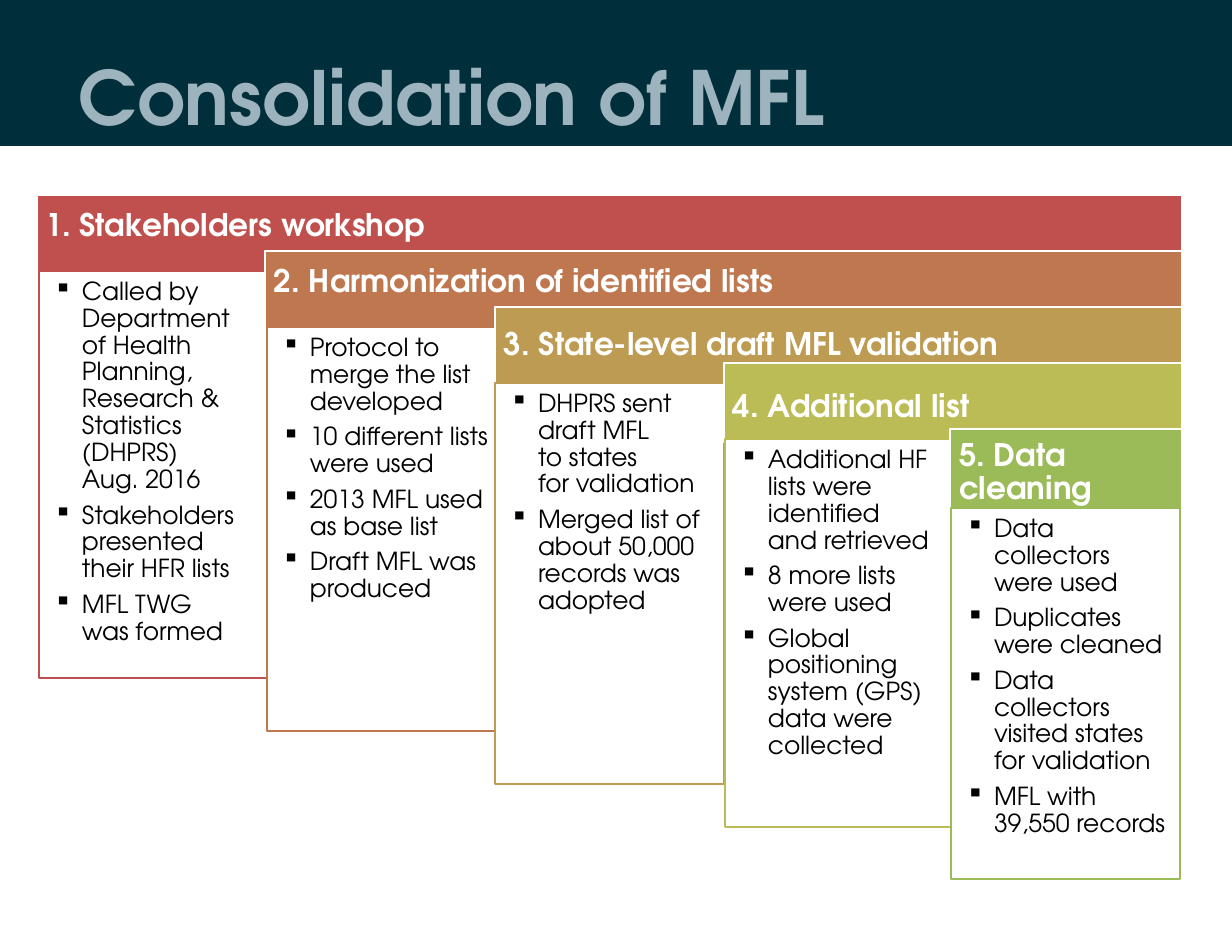
from lxml.etree import SubElement
from pptx import Presentation
from pptx.dml.color import RGBColor
from pptx.enum.shapes import MSO_SHAPE
from pptx.enum.text import MSO_ANCHOR as Anchor, PP_ALIGN as Align
from pptx.oxml.ns import qn
from pptx.util import Emu, Pt

SCALE = 914400 // 112
FONT = "TeX Gyre Adventor"
RIGHT, BAR_H, BODY_W = 1182, 80, 229

# heading, colour, bar (left, top, top inset), body (left, top, bottom), points
STEPS = [
    ("1. Stakeholders workshop", "C0504D", (37, 195, 9), (39, 271, 678), [
        "Called by Department\nof Health Planning, Research & Statistics (DHPRS)\nAug. 2016",
        "Stakeholders presented their HFR lists",
        "MFL TWG\nwas formed"]),
    ("2. Harmonization of identified lists", "BF7750", (265, 251, 9), (267, 327, 731), [
        "Protocol to merge the list developed",
        "10 different lists were used",
        "2013 MFL used as base list",
        "Draft MFL was produced"]),
    ("3. State-level draft MFL validation", "BD9B53", (495, 307, 22), (495, 383, 784), [
        "DHPRS sent draft MFL\nto states\nfor validation",
        "Merged list of about 50,000 records was adopted"]),
    ("4. Additional list", "BCBC56", (724, 363, 34), (725, 439, 827), [
        "Additional HF lists were identified\nand retrieved",
        "8 more lists were used",
        "Global positioning system (GPS) data were collected"]),
    ("5. Data cleaning", "9BBB59", (950, 429, 34), (951, 508, 879), [
        "Data collectors were used",
        "Duplicates were cleaned",
        "Data collectors visited states for validation",
        "MFL with 39,550 records"]),
]


def px(n):
    return Emu(n * SCALE)


def color(code):
    return RGBColor.from_string(code)


def panel(slide, box, fill, line=None):
    shape = slide.shapes.add_shape(MSO_SHAPE.RECTANGLE, *map(px, box))
    shape.shadow.inherit = False
    shape.fill.solid()
    shape.fill.fore_color.rgb = color(fill)
    if line:
        shape.line.color.rgb = color(line)
        shape.line.width = Pt(0.75)
    else:
        shape.line.fill.background()
    return shape


def set_frame(frame, insets, anchor):
    """Insets run left, top, right, bottom."""
    frame.word_wrap = True
    frame.vertical_anchor = anchor
    (frame.margin_left, frame.margin_top,
     frame.margin_right, frame.margin_bottom) = map(px, insets)


def write(para, text, size, code, bold=False):
    para.alignment = Align.LEFT
    for i, part in enumerate(text.split("\n")):
        if i:
            para.add_line_break()
        run = para.add_run()
        run.text = part
        font = run.font
        font.name, font.size, font.bold = FONT, Pt(size), bold
        font.color.rgb = color(code)


def add_bullet(para):
    props = para._p.get_or_add_pPr()
    props.set("marL", str(px(35)))
    props.set("indent", str(px(-28)))
    SubElement(props, qn("a:buChar"), char="▪")


def add_title(slide, box, text):
    left, top, width, height = box
    panel(slide, box, "002E3A")
    label = slide.shapes.add_textbox(
        px(left + 68), px(top + 45), px(width - 164), px(height - 6))
    set_frame(label.text_frame, (11, 6, 11, 6), Anchor.TOP)
    write(label.text_frame.paragraphs[0], text, 48, "9DB4BE", True)


def add_bar(slide, box, text, fill, inset):
    frame = panel(slide, box, fill, "FFFFFF").text_frame
    set_frame(frame, (9, inset, 31, 26), Anchor.MIDDLE)
    para = frame.paragraphs[0]
    para.line_spacing = 0.9
    write(para, text, 20, "FFFFFF", True)


def add_body(slide, box, points, line):
    frame = panel(slide, box, "FFFFFF", line).text_frame
    set_frame(frame, (8, 8, 8, 8), Anchor.TOP)
    for i, point in enumerate(points):
        para = frame.add_paragraph() if i else frame.paragraphs[0]
        para.line_spacing = 0.9
        para.space_after = Pt(5.6)
        add_bullet(para)
        write(para, point, 16, "000000")


def main():
    deck = Presentation()
    deck.slide_width, deck.slide_height = px(1232), px(952)
    slide = deck.slides.add_slide(deck.slide_layouts[6])
    add_title(slide, (0, 0, 1232, 146), "Consolidation of MFL")
    for name, tint, (left, top, inset), (x, y, end), points in STEPS:
        add_bar(slide, (left, top, RIGHT - left, BAR_H), name, tint, inset)
        add_body(slide, (x, y, BODY_W, end - y), points, tint)
    deck.save("out.pptx")


if __name__ == "__main__":
    main()
